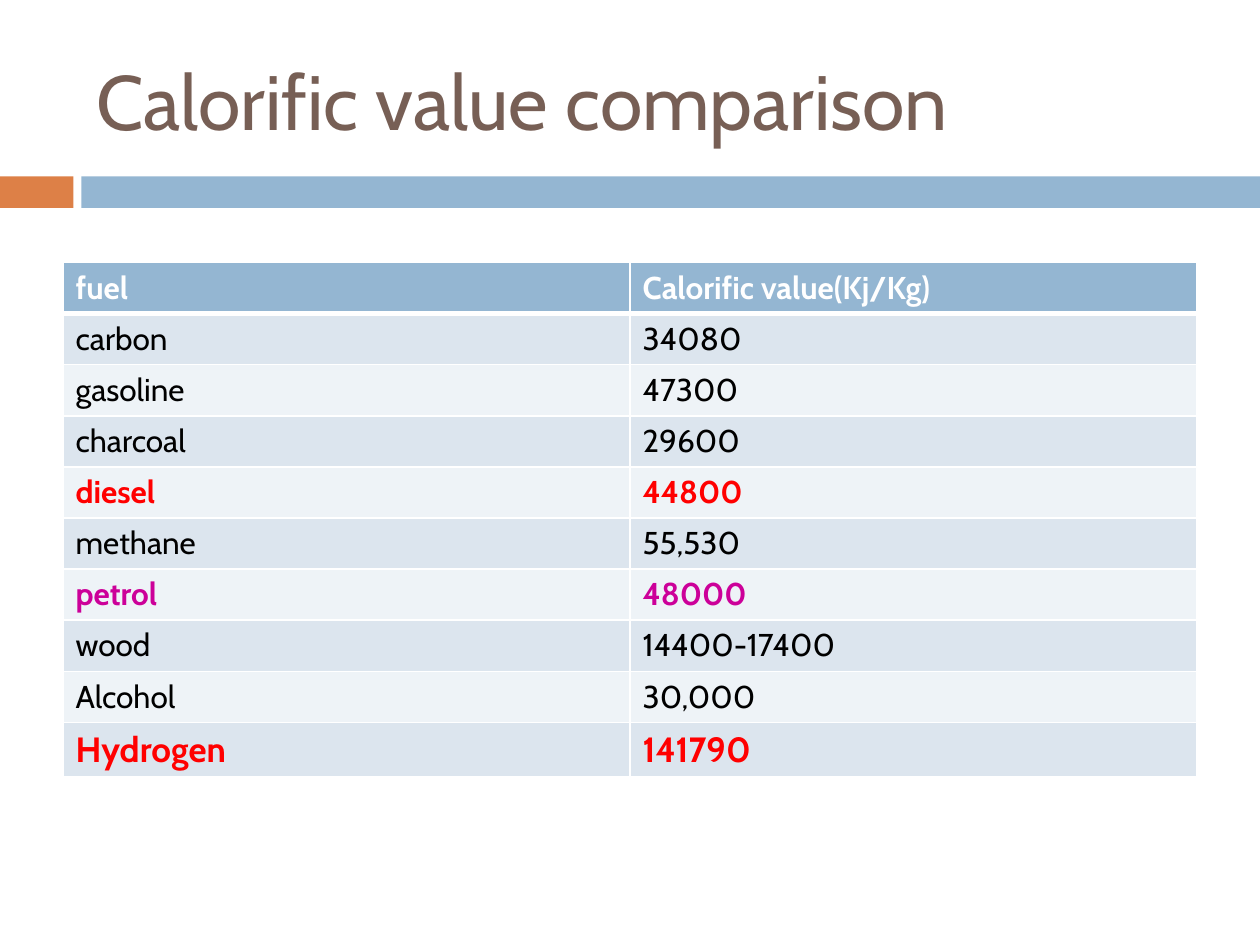
from dataclasses import dataclass

import lxml.etree
import pptx
import pptx.dml.color
import pptx.enum.shapes
import pptx.enum.text
import pptx.oxml.ns
import pptx.util

Pt = pptx.util.Pt


@dataclass(frozen=True)
class Theme:
    font: str = "Cabin"
    title: str = "775F55"
    accent: str = "DD8047"
    header: str = "94B6D2"
    bands: tuple = ("DCE5EE", "EEF3F7")
    white: str = "FFFFFF"
    black: str = "000000"
    red: str = "FF0000"
    magenta: str = "CC0099"
    title_size: float = 44
    body_size: float = 18
    large_size: float = 20


THEME = Theme()


@dataclass(frozen=True)
class Bar:
    left: float
    width: float
    color: str


@dataclass(frozen=True)
class FuelRow:
    fuel: str
    value: str
    color: str = THEME.black
    bold: bool = False
    size: float = THEME.body_size
    height: float = 29.2


BARS = [Bar(0, 42, THEME.accent), Bar(46.5, 673.5, THEME.header)]
ROWS = [
    FuelRow("fuel", "Calorific value(Kj/Kg)", THEME.white, True),
    FuelRow("carbon", "34080"),
    FuelRow("gasoline", "47300"),
    FuelRow("charcoal", "29600"),
    FuelRow("diesel", "44800", THEME.red, True),
    FuelRow("methane", "55,530"),
    FuelRow("petrol", "48000", THEME.magenta, True),
    FuelRow("wood", "14400-17400"),
    FuelRow("Alcohol", "30,000"),
    FuelRow("Hydrogen", "141790", THEME.red, True, THEME.large_size, 31.2),
]


def rgb(color: str) -> pptx.dml.color.RGBColor:
    return pptx.dml.color.RGBColor.from_string(color)


def write_text(text_frame, text: str, size: float, color: str, bold: bool = False) -> None:
    run = text_frame.paragraphs[0].add_run()
    run.text = text
    formats = {"name": THEME.font, "size": Pt(size), "bold": bold}
    for name, value in formats.items():
        setattr(run.font, name, value)
    run.font.color.rgb = rgb(color)


def draw_bar(slide, bar: Bar) -> None:
    shape = slide.shapes.add_shape(
        pptx.enum.shapes.MSO_SHAPE.RECTANGLE, Pt(bar.left), Pt(100.8), Pt(bar.width), Pt(18))
    shape.shadow.inherit = False
    shape.fill.solid()
    shape.fill.fore_color.rgb = rgb(bar.color)
    shape.line.fill.background()


def draw_title(slide, text: str) -> None:
    text_box = slide.shapes.add_textbox(Pt(48), Pt(18), Pt(642), Pt(78))
    formats = {"word_wrap": True, "vertical_anchor": pptx.enum.text.MSO_ANCHOR.MIDDLE}
    for name, value in formats.items():
        setattr(text_box.text_frame, name, value)
    write_text(text_box.text_frame, text, THEME.title_size, THEME.title)


def set_borders(cell, widths: dict[str, float]) -> None:
    properties = cell._tc.get_or_add_tcPr()
    qualified = pptx.oxml.ns.qn
    # Borders must come before the fill in the cell properties
    for index, (side, width) in enumerate(widths.items()):
        line = lxml.etree.Element(qualified(f"a:ln{side}"), w=str(Pt(width)))
        fill = lxml.etree.SubElement(line, qualified("a:solidFill"))
        lxml.etree.SubElement(fill, qualified("a:srgbClr"), val=THEME.white)
        properties.insert(index, line)


def draw_table(slide, rows: list[FuelRow]) -> None:
    height = sum(row.height for row in rows)
    table = slide.shapes.add_table(len(rows), 2, Pt(36), Pt(150), Pt(648), Pt(height)).table
    for index, row in enumerate(rows):
        table.rows[index].height = Pt(row.height)
        fill = THEME.bands[(index - 1) % 2] if index else THEME.header
        # The rule under the header is heavier
        widths = {"L": 1, "R": 1, "T": 3 if index == 1 else 1, "B": 1 if index else 3}
        for cell, text in zip(table.rows[index].cells, (row.fuel, row.value)):
            cell.fill.solid()
            cell.fill.fore_color.rgb = rgb(fill)
            set_borders(cell, widths)
            write_text(cell.text_frame, text, row.size, row.color, row.bold)


def main() -> None:
    presentation = pptx.Presentation()
    presentation.slide_width, presentation.slide_height = Pt(720), Pt(540)
    slide = presentation.slides.add_slide(presentation.slide_layouts[6])

    # Divider bars
    for bar in BARS:
        draw_bar(slide, bar)

    # Title and table
    draw_title(slide, "Calorific value comparison")
    draw_table(slide, ROWS)

    presentation.save("out.pptx")


if __name__ == "__main__":
    main()
